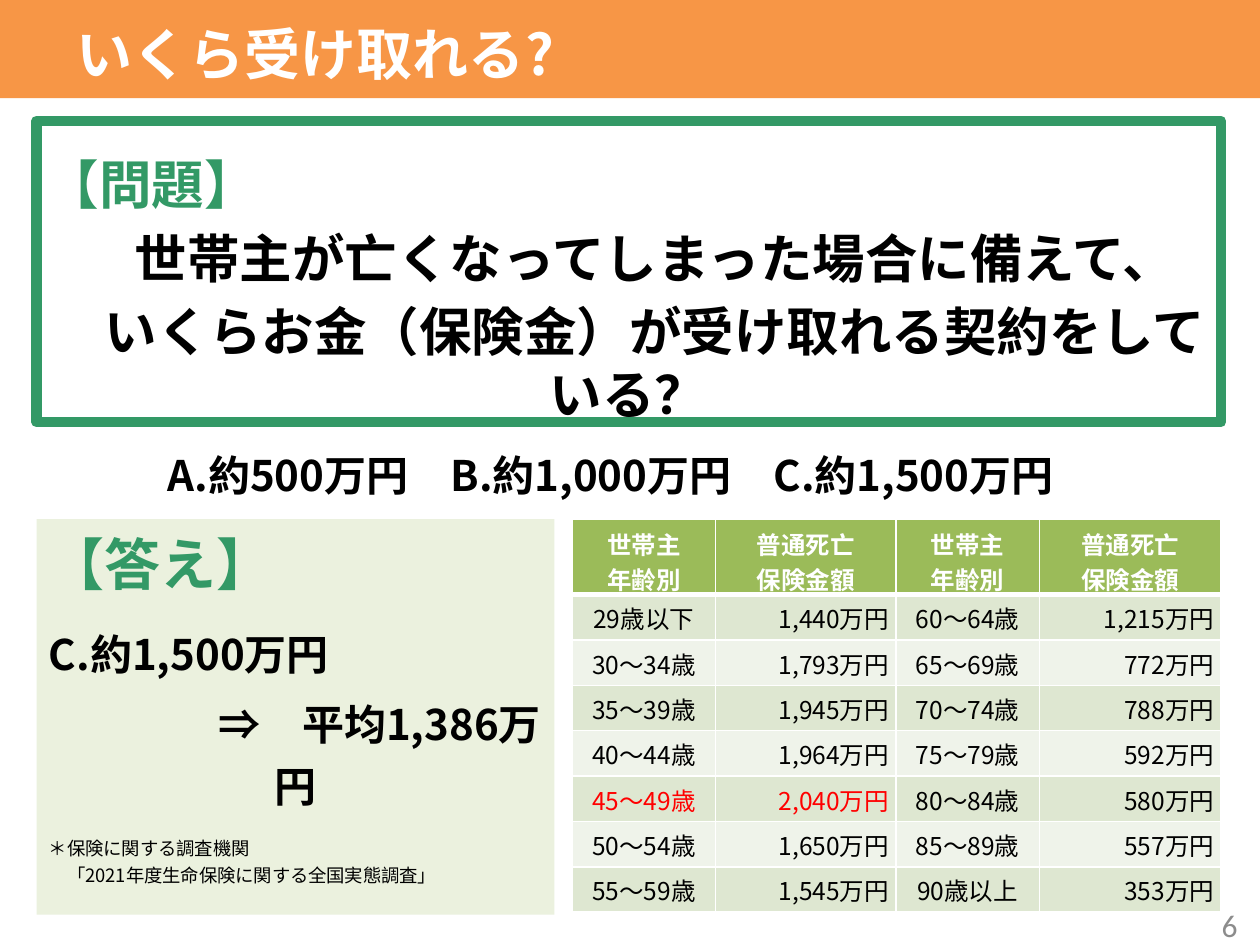
from lxml.etree import SubElement
from pptx import Presentation
from pptx.dml.color import RGBColor
from pptx.enum.shapes import MSO_SHAPE
from pptx.enum.text import MSO_ANCHOR, PP_ALIGN
from pptx.oxml.ns import qn
from pptx.util import Inches, Pt

JAPANESE_FONT = "Noto Sans CJK JP"
GREEN, BLACK, WHITE, RED = "339966", "000000", "FFFFFF", "FF0000"
LEFT, CENTER, RIGHT = PP_ALIGN.LEFT, PP_ALIGN.CENTER, PP_ALIGN.RIGHT

HEADERS = ["世帯主\n年齢別", "普通死亡\n保険金額"] * 2
BENEFITS = [
    ("29歳以下", "1,440", "60～64歳", "1,215"),
    ("30～34歳", "1,793", "65～69歳", "772"),
    ("35～39歳", "1,945", "70～74歳", "788"),
    ("40～44歳", "1,964", "75～79歳", "592"),
    ("45～49歳", "2,040", "80～84歳", "580"),
    ("50～54歳", "1,650", "85～89歳", "557"),
    ("55～59歳", "1,545", "90歳以上", "353"),
]
HIGHEST_BENEFIT_ROW = 5


def color(value):
    return RGBColor.from_string(value)


def format_paragraph(paragraph, size, text_color, bold=True, align=LEFT,
                     before=0, line=None, font_name=JAPANESE_FONT):
    paragraph.alignment = align
    paragraph.space_before = Pt(before)
    if line:
        paragraph.line_spacing = Pt(line)
    for run in paragraph.runs:
        run.font.size = Pt(size)
        run.font.bold = bold
        run.font.name = font_name
        run.font.color.rgb = color(text_color)
        SubElement(run.font._element, qn("a:ea")).set("typeface", font_name)


def set_margins(target, left, top, right, bottom):
    target.margin_left, target.margin_top = Inches(left), Inches(top)
    target.margin_right, target.margin_bottom = Inches(right), Inches(bottom)


def add_panel(slide, left, top, width, height, fill, outline=None):
    shape = slide.shapes.add_shape(MSO_SHAPE.RECTANGLE, Inches(left), Inches(top),
                                   Inches(width), Inches(height))
    shape.shadow.inherit = False
    shape.fill.solid()
    shape.fill.fore_color.rgb = color(fill)
    if outline:
        shape.line.color.rgb = color(outline)
        shape.line.width = Pt(6)
    else:
        shape.line.fill.background()
    return shape


def add_label(slide, left, top, width, height, text, anchor, **style):
    text_frame = slide.shapes.add_textbox(Inches(left), Inches(top), Inches(width),
                                          Inches(height)).text_frame
    text_frame.word_wrap = True
    text_frame.vertical_anchor = anchor
    text_frame.text = text
    format_paragraph(text_frame.paragraphs[0], **style)


def fill_panel(shape, margins, items):
    text_frame = shape.text_frame
    text_frame.word_wrap = True
    text_frame.vertical_anchor = MSO_ANCHOR.TOP
    set_margins(text_frame, *margins)
    text_frame.text = "\n".join(text for text, style in items)
    for paragraph, (text, style) in zip(text_frame.paragraphs, items):
        format_paragraph(paragraph, **style)


def add_border(cell, side, width):
    border = SubElement(cell._tc.get_or_add_tcPr(), qn(f"a:{side}"), w=str(Pt(width)))
    fill = SubElement(border, qn("a:solidFill"))
    SubElement(fill, qn("a:srgbClr"), val=WHITE)


def format_cell(cell, text, fill, margins, bottom_border=1, **style):
    cell.text = text
    cell.vertical_anchor = MSO_ANCHOR.MIDDLE
    set_margins(cell, *margins)
    for paragraph in cell.text_frame.paragraphs:
        format_paragraph(paragraph, size=14, **style)
    for side in ("lnL", "lnR", "lnT"):
        add_border(cell, side, 1)
    add_border(cell, "lnB", bottom_border)
    cell.fill.solid()
    cell.fill.fore_color.rgb = color(fill)


def add_benefit_table(slide):
    table = slide.shapes.add_table(len(BENEFITS) + 1, len(HEADERS), Inches(4.54),
                                   Inches(4.12), Inches(5.16), Inches(3.14)).table
    for column, width in zip(table.columns, (1.14, 1.43, 1.14, 1.44)):
        column.width = Inches(width)
    for index, row in enumerate(table.rows):
        row.height = Inches(0.36 if index else 0.6)
    for column, header in enumerate(HEADERS):
        format_cell(table.cell(0, column), header, "9BBB59", (0.1, 0.05, 0.1, 0),
                    bottom_border=3, text_color=WHITE, align=CENTER)
    for row, values in enumerate(BENEFITS, 1):
        fill = "DEE7D1" if row % 2 else "EFF3EA"
        for column, value in enumerate(values):
            is_amount = column % 2 == 1
            highlighted = row == HIGHEST_BENEFIT_ROW and column < 2
            format_cell(table.cell(row, column), f"{value}万円 " if is_amount else value,
                        fill, (0.01, 0.01, 0.01, 0), bold=False,
                        text_color=RED if highlighted else BLACK,
                        align=RIGHT if is_amount else CENTER)


def main():
    presentation = Presentation()
    presentation.slide_width, presentation.slide_height = Inches(10), Inches(7.5)
    slide = presentation.slides.add_slide(presentation.slide_layouts[6])

    add_panel(slide, 0, 0, 10, 0.78, "F79646")
    add_label(slide, 0.51, 0.03, 5.8, 0.79, "いくら受け取れる?", MSO_ANCHOR.MIDDLE,
              size=32, text_color=WHITE)

    question = dict(size=30, text_color=BLACK, align=CENTER, before=6, line=36)
    fill_panel(add_panel(slide, 0.29, 0.96, 9.4, 2.39, WHITE, GREEN),
               (0.08, 0.25, 0.08, 0.05), [
        ("【問題】", dict(size=30, text_color=GREEN, line=36)),
        ("　世帯主が亡くなってしまった場合に備えて、", question),
        ("　いくらお金（保険金）が受け取れる契約をしている？", question),
    ])

    answer = dict(size=24, text_color=BLACK, line=35)
    source = dict(size=10.5, text_color=BLACK, bold=False, line=13)
    fill_panel(add_panel(slide, 0.29, 4.12, 4.11, 3.14, "EBF1DE"),
               (0.1, 0.09, 0.1, 0.05), [
        ("【答え】", dict(size=32, text_color=GREEN, line=38)),
        ("C.約1,500万円", dict(answer, before=12)),
        ("　　　　⇒　平均1,386万円", dict(answer, before=5, align=CENTER)),
        ("＊保険に関する調査機関", dict(source, before=15)),
        ("　「2021年度生命保険に関する全国実態調査」", dict(source, before=2)),
    ])

    add_label(slide, 0.17, 3.5, 9.35, 0.5, "A.約500万円　B.約1,000万円　C.約1,500万円",
              MSO_ANCHOR.TOP, size=24, text_color=BLACK, align=CENTER, line=30)
    add_benefit_table(slide)
    add_label(slide, 7.59, 7.14, 2.33, 0.4, "6", MSO_ANCHOR.MIDDLE, size=18,
              text_color="8C8C8C", bold=False, align=RIGHT, font_name="Calibri")
    presentation.save("out.pptx")


if __name__ == "__main__":
    main()
